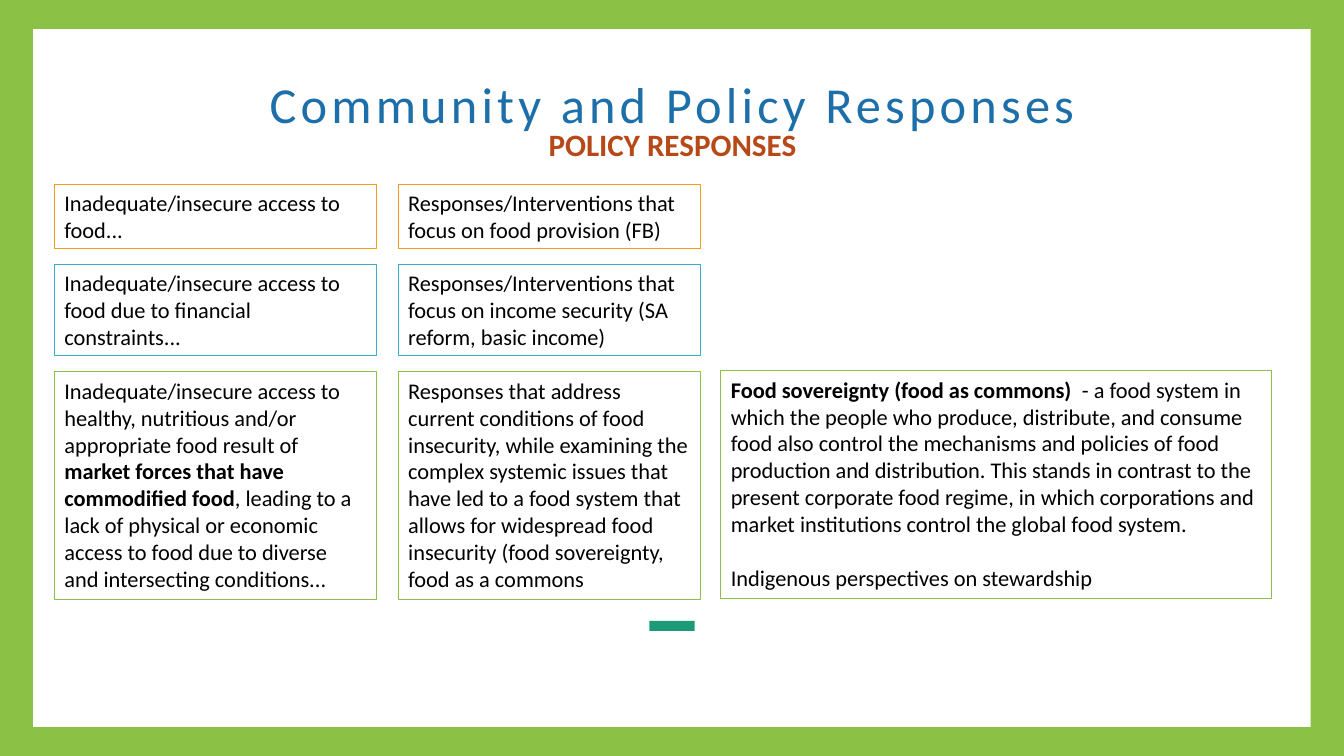
from pptx import Presentation
from pptx import util as u
from pptx.dml.color import RGBColor
from pptx.enum import shapes, text

GREEN, ORANGE, BLUE = "8BC145", "F19D19", "36AFCE"


def color(value):
    return RGBColor.from_string(value)


class SlideBuilder:
    font = "Calibri"

    def __init__(self, slide, background):
        self.slide = slide
        fill = slide.background.fill
        fill.solid()
        fill.fore_color.rgb = color(background)

    def rect(self, box, fill=None, line=None):
        shape = self.slide.shapes.add_shape(
            shapes.MSO_SHAPE.RECTANGLE, *map(u.Inches, box))
        shape.shadow.inherit = False
        if fill:
            shape.fill.solid()
            shape.fill.fore_color.rgb = color(fill)
        else:
            shape.fill.background()
        if line:
            shape.line.color.rgb = color(line)
            shape.line.width = u.Pt(0.75)
        else:
            shape.line.fill.background()
        return shape

    def style(self, run, size, ink, bold=False):
        run.font.name = self.font
        run.font.size = u.Pt(size)
        run.font.color.rgb = color(ink)
        run.font.bold = bold

    def heading(self, box, wording, size, ink, line_spacing,
                anchor=text.MSO_ANCHOR.TOP, bold=False, tracking=0):
        """Add a centred line of text; tracking is in points."""
        frame = self.slide.shapes.add_textbox(*map(u.Inches, box)).text_frame
        frame.word_wrap = True
        frame.vertical_anchor = anchor
        frame.text = wording
        line = frame.paragraphs[0]
        line.alignment = text.PP_ALIGN.CENTER
        line.line_spacing = line_spacing
        self.style(line.runs[0], size, ink, bold)
        if tracking:
            line.runs[0].font._element.set("spc", str(tracking * 100))

    def card(self, box, outline, paragraphs):
        """Add an outlined box; each paragraph is a list of (wording, bold)."""
        frame = self.rect(box, line=outline).text_frame
        frame.word_wrap = True
        frame.vertical_anchor = text.MSO_ANCHOR.TOP
        for index, pieces in enumerate(paragraphs):
            paragraph = frame.add_paragraph() if index else frame.paragraphs[0]
            paragraph.alignment = text.PP_ALIGN.LEFT
            if index:
                paragraph.space_before = u.Pt(19.5)
            for wording, bold in pieces:
                run = paragraph.add_run()
                run.text = wording
                self.style(run, 16, "000000", bold)


# Each row: top, height, outline, problem, response
ROWS = [
    (1.83, 0.64, ORANGE,
     [("Inadequate/insecure access to food...", False)],
     [("Responses/Interventions that focus on food provision (FB)", False)]),
    (2.62, 0.91, BLUE,
     [("Inadequate/insecure access to food due to financial constraints...", False)],
     [("Responses/Interventions that focus on income security "
       "(SA reform, basic income)", False)]),
    (3.69, 2.26, GREEN,
     [("Inadequate/insecure access to healthy, nutritious and/or appropriate "
       "food result of ", False),
      ("market forces that have commodified food", True),
      (", leading to a lack of physical or economic access to food due to "
       "diverse and intersecting conditions...", False)],
     [("Responses that address current conditions of food insecurity, while "
       "examining the complex systemic issues that have led to a food system "
       "that allows for widespread food insecurity (food sovereignty, food as "
       "a commons", False)]),
]
COLUMNS = [(0.54, 3.19), (3.95, 3)]
SOVEREIGNTY = [
    [("Food sovereignty (food as commons)", True),
     ("  - a food system in which the people who produce, distribute, and "
      "consume food also control the mechanisms and policies of food "
      "production and distribution. This stands in contrast to the present "
      "corporate food regime, in which corporations and market institutions "
      "control the global food system.", False)],
    [("Indigenous perspectives on stewardship", False)],
]


def main():
    deck = Presentation()
    deck.slide_width, deck.slide_height = u.Inches(13.33), u.Inches(7.5)
    page = SlideBuilder(deck.slides.add_slide(deck.slide_layouts[6]), GREEN)

    page.rect((0.33, 0.29, 12.67, 6.92), fill="FFFFFF")
    page.rect((6.44, 6.16, 0.45, 0.1), fill="1D9A78")
    page.heading((0.92, 0.71, 11.5, 0.7), "Community and Policy Responses",
                 36, "1D6FA9", 0.9, text.MSO_ANCHOR.MIDDLE, tracking=3)
    page.heading((1.67, 1.3, 10, 0.39), "POLICY RESPONSES",
                 22.2, "B74919", 0.7, bold=True)

    for top, height, outline, *cells in ROWS:
        for (left, width), pieces in zip(COLUMNS, cells):
            page.card((left, top, width, height), outline, [pieces])
    page.card((7.15, 3.68, 5.46, 2.26), GREEN, SOVEREIGNTY)

    deck.save("out.pptx")


if __name__ == "__main__":
    main()
